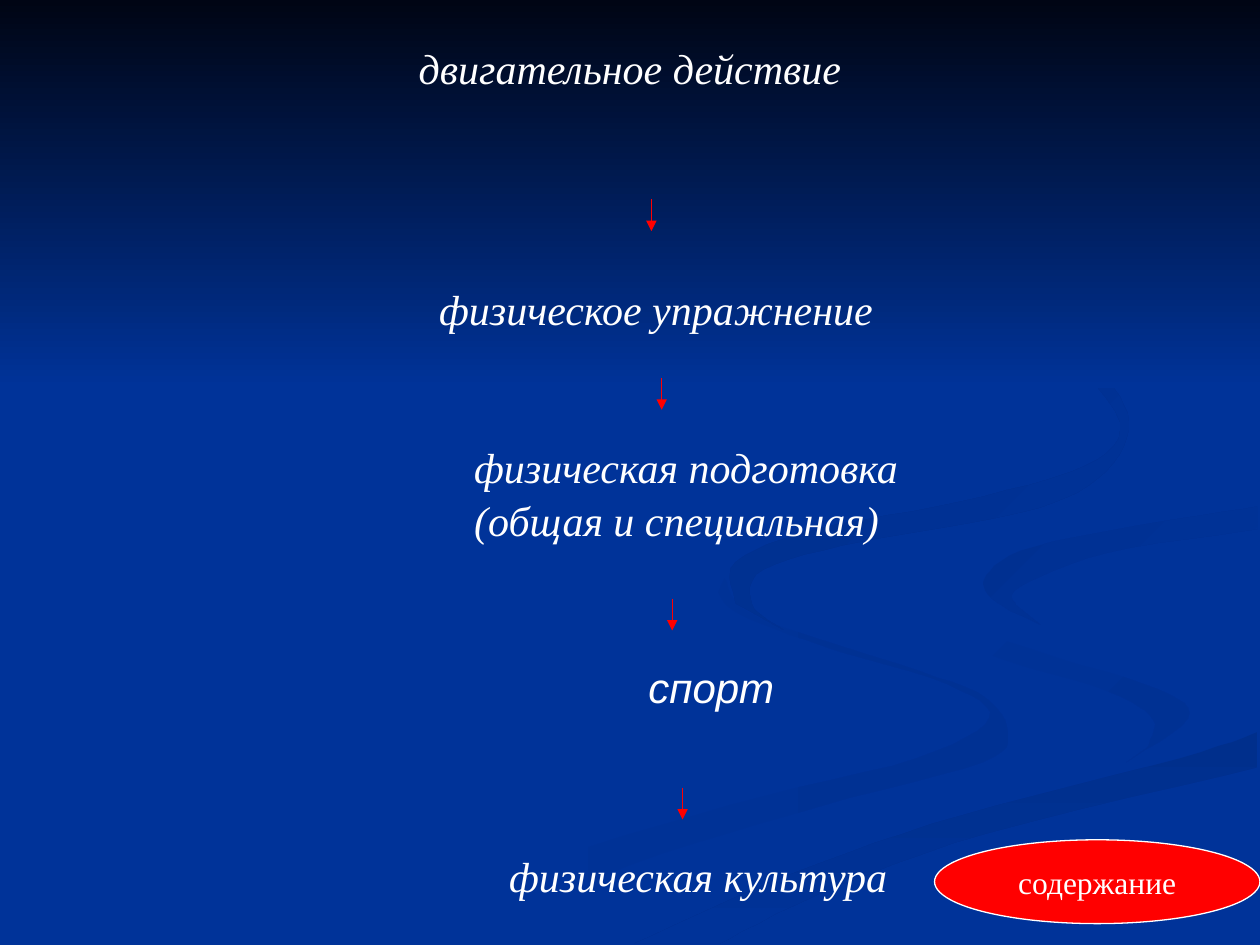
from lxml.etree import SubElement
from pptx import Presentation
from pptx.dml.color import RGBColor
from pptx.enum.shapes import MSO_CONNECTOR as Connector, MSO_SHAPE as Shape
from pptx.enum.text import MSO_ANCHOR as Anchor, PP_ALIGN as Align
from pptx.oxml.ns import qn
from pptx.util import Cm, Pt


class Theme:
    blue = RGBColor.from_string("003399")
    night = RGBColor.from_string("000514")
    shade = RGBColor.from_string("003193")
    deep_shade = RGBColor.from_string("002F8C")
    soft_shade = RGBColor.from_string("003091")
    red = RGBColor.from_string("FF0000")
    white = RGBColor.from_string("FFFFFF")
    serif = "Times New Roman"
    sans = "Arial"
    step_size = Pt(24)
    button_size = Pt(18)
    line_width = Pt(0.75)


def smooth(knots, steps=6):
    """Return points on a Catmull-Rom curve through the knots."""
    padded = [knots[0], *knots, knots[-1]]
    points = [knots[0]]
    for a, b, c, d in zip(padded, padded[1:], padded[2:], padded[3:]):
        for t in (step / steps for step in range(1, steps + 1)):
            points.append(tuple(
                q + t / 2 * (r - p + t * (2 * p - 5 * q + 4 * r - s
                                          + t * (3 * (q - r) + s - p)))
                for p, q, r, s in zip(a, b, c, d)))
    return points


def add_text(paragraph, text, font_name, size, italic):
    run = paragraph.add_run()
    run.text = text
    run.font.name = font_name
    run.font.size = size
    run.font.italic = italic
    run.font.color.rgb = Theme.white


presentation = Presentation()
presentation.slide_width = Cm(25.4)
presentation.slide_height = Cm(19.05)
slide = presentation.slides.add_slide(presentation.slide_layouts[6])
slide.background.fill.solid()
slide.background.fill.fore_color.rgb = Theme.blue

# Ribbons: first colour, last colour, angle, two edges in 1/1000 of the slide width
ribbons = [
    (Theme.blue, Theme.shade, 0,
     [(575, 459), (602, 490), (731, 533), (781, 553), (800, 581), (780, 605),
      (651, 640), (499, 687), (361, 749)],
     [(300, 749), (417, 690), (579, 639), (727, 602), (785, 570), (752, 543),
      (654, 513), (586, 487), (570, 470)]),
    (Theme.blue, Theme.shade, 45,
     [(724, 464), (745, 490), (830, 519), (919, 547), (943, 570), (894, 605)],
     [(911, 593), (915, 571), (880, 549), (781, 518), (733, 488)]),
    (Theme.deep_shade, Theme.blue, 90,
     [(998, 581), (936, 602), (764, 647), (630, 693), (503, 749)],
     [(571, 749), (649, 710), (785, 661), (998, 609)]),
    (Theme.soft_shade, Theme.blue, 45,
     [(998, 402), (898, 418), (810, 437), (781, 460), (791, 478), (826, 496)],
     [(806, 480), (809, 466), (878, 439), (998, 420)]),
    (Theme.deep_shade, Theme.blue, 45,
     [(762, 233), (843, 275), (889, 315), (892, 354), (855, 391), (786, 412),
      (683, 430), (606, 452), (597, 480), (622, 500)],
     [(584, 479), (584, 446), (649, 420), (763, 398), (861, 370), (889, 335),
      (846, 279)]),
    (Theme.night, Theme.blue, 90, [(0, 0), (1000, 0)], [(1000, 308), (0, 308)]),
]
for first, last, angle, *edges in ribbons:
    outline = [point for edge in edges for point in smooth(edge)]
    builder = slide.shapes.build_freeform(*outline[0], scale=presentation.slide_width / 1000)
    builder.add_line_segments(outline[1:], close=True)
    ribbon = builder.convert_to_shape()
    ribbon.fill.gradient()
    ribbon.fill.gradient_angle = (360 - angle) % 360
    for stop, color in zip(ribbon.fill.gradient_stops, (first, last)):
        stop.color.rgb = color
    ribbon.line.fill.background()
    ribbon.shadow.inherit = False

# Arrows between the steps, each a little further right
for index, top in enumerate([4.02, 7.62, 12.07, 15.88]):
    x = Cm(13.13 + 0.21 * index)
    arrow = slide.shapes.add_connector(
        Connector.STRAIGHT, x, Cm(top), x, Cm(top + 0.64))
    arrow.line.color.rgb = Theme.red
    arrow.line.width = Theme.line_width
    SubElement(arrow.line._get_or_add_ln(), qn("a:tailEnd"), type="triangle")
    SubElement(arrow._element.spPr, qn("a:effectLst"))

# Steps: left, top, width, height, font, alignment, lines
steps = [
    (3.39, 0.64, 18.62, 2.29, Theme.serif, Align.CENTER, ["двигательное действие"]),
    (5.5, 5.5, 15.45, 1.27, Theme.serif, Align.CENTER, ["физическое упражнение"]),
    (9.31, 8.68, 9.37, 3.3, Theme.serif, Align.LEFT,
     ["физическая подготовка", "(общая и специальная)"]),
    (11.38, 13.12, 5.92, 2.29, Theme.sans, Align.CENTER, ["спорт"]),
    (6.77, 16.93, 14.61, 1.27, Theme.serif, Align.CENTER, ["физическая культура"]),
]
for left, top, width, height, font_name, alignment, lines in steps:
    box = slide.shapes.add_textbox(Cm(left), Cm(top), Cm(width), Cm(height))
    frame = box.text_frame
    frame.word_wrap = True
    frame.margin_top = Cm(0.22)
    for index, line in enumerate(lines):
        paragraph = frame.add_paragraph() if index else frame.paragraphs[0]
        paragraph.alignment = alignment
        paragraph.space_before = Pt(1.5 if index else 0)
        add_text(paragraph, line, font_name, Theme.step_size, True)

# Contents button
button = slide.shapes.add_shape(Shape.OVAL, Cm(18.84), Cm(16.93), Cm(6.56), Cm(1.69))
button.fill.solid()
button.fill.fore_color.rgb = Theme.red
button.line.color.rgb = Theme.white
button.line.width = Theme.line_width
button.shadow.inherit = False
button.text_frame.word_wrap = False
button.text_frame.vertical_anchor = Anchor.MIDDLE
paragraph = button.text_frame.paragraphs[0]
paragraph.alignment = Align.CENTER
add_text(paragraph, "содержание", Theme.serif, Theme.button_size, False)

presentation.save("out.pptx")
